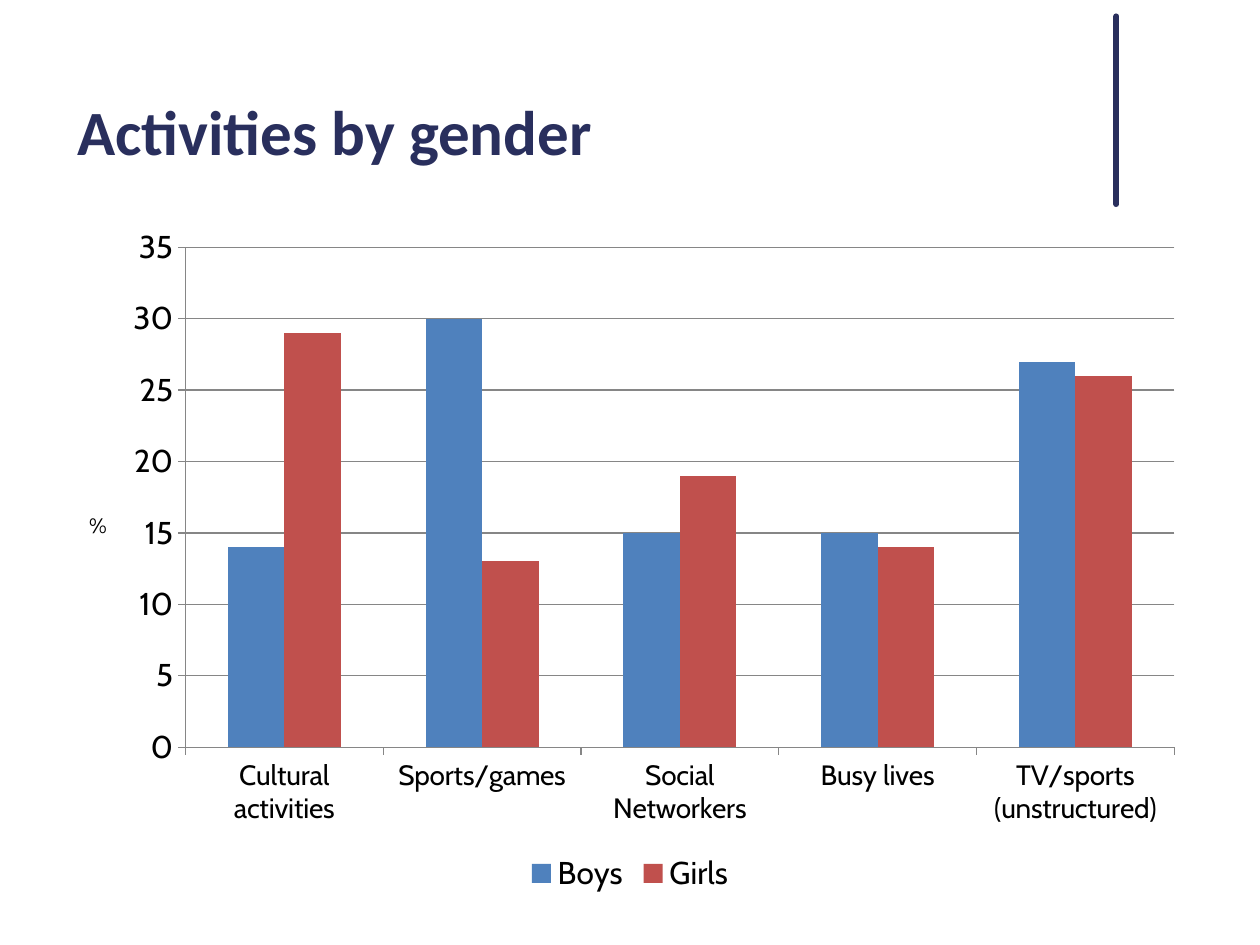
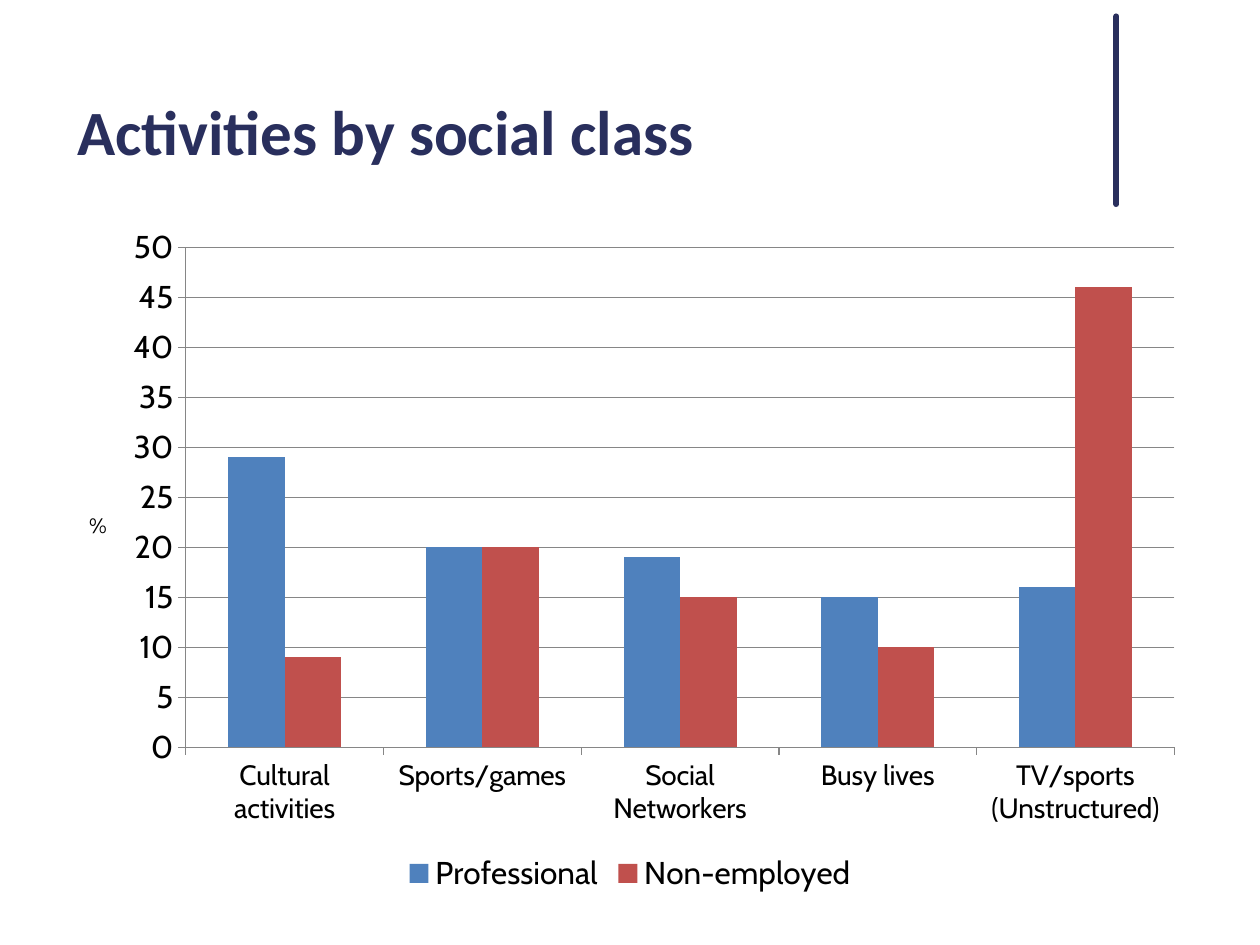
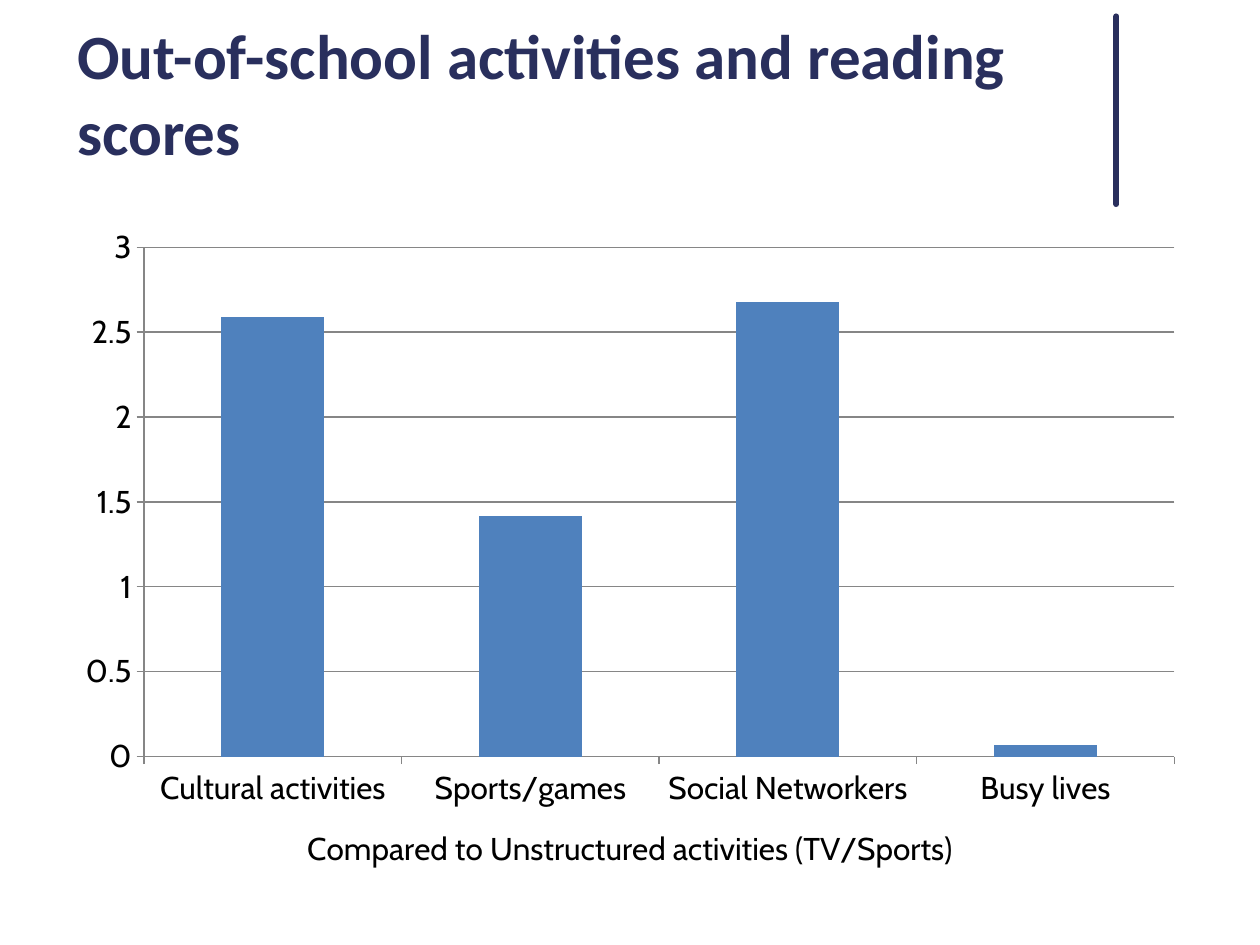
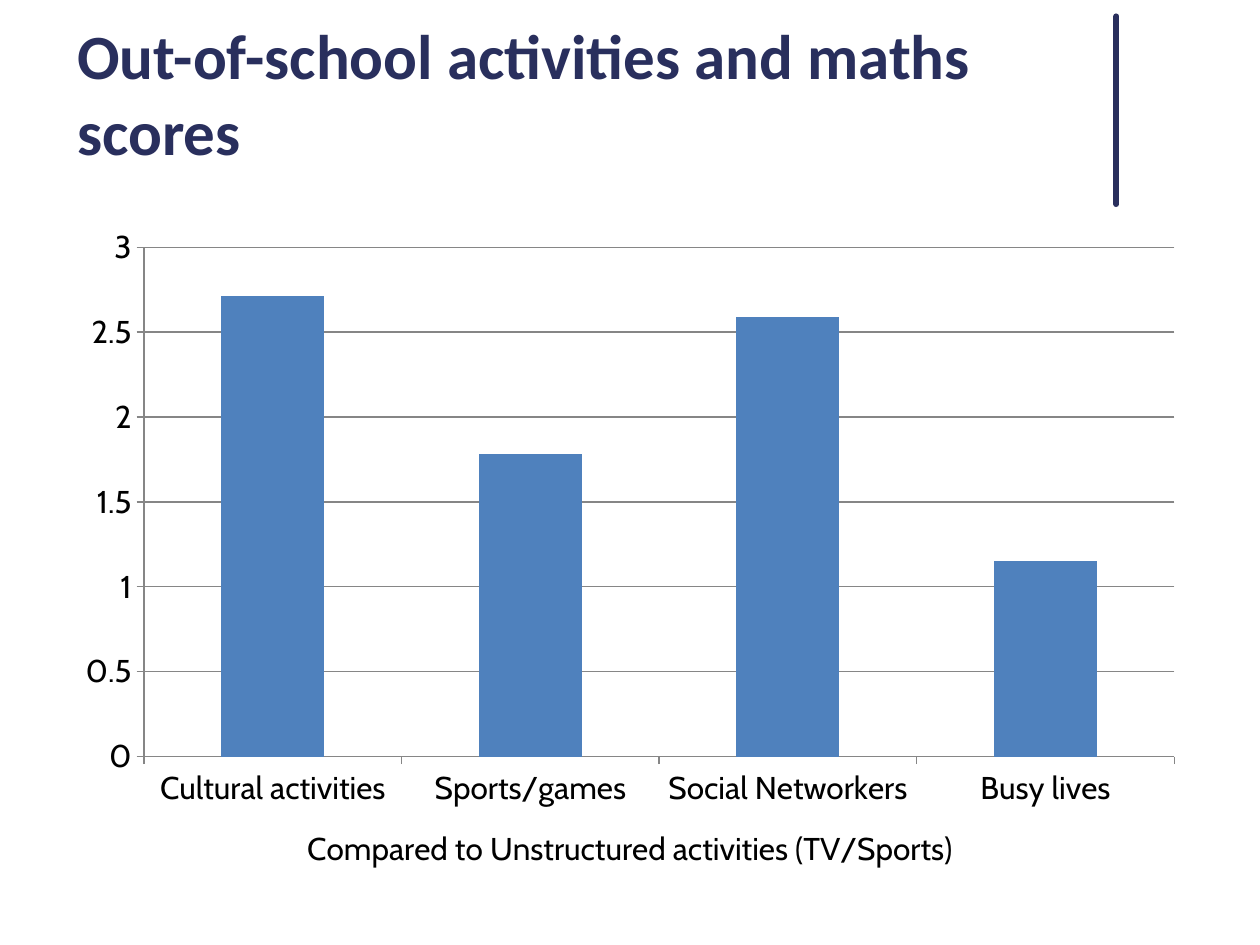
from pptx import Presentation
from pptx.chart.data import CategoryChartData
from pptx.dml.color import RGBColor
from pptx.enum.chart import XL_CHART_TYPE, XL_LEGEND_POSITION, XL_TICK_MARK
from pptx.enum.shapes import MSO_CONNECTOR
from pptx.enum.text import MSO_ANCHOR, MSO_AUTO_SIZE, PP_ALIGN
from pptx.oxml.ns import qn
from pptx.util import Pt
from lxml import etree

COLUMNS = XL_CHART_TYPE.COLUMN_CLUSTERED
LEGEND_BOTTOM = XL_LEGEND_POSITION.BOTTOM
OUTSIDE = XL_TICK_MARK.OUTSIDE
STRAIGHT = MSO_CONNECTOR.STRAIGHT
BOTTOM = MSO_ANCHOR.BOTTOM
NO_AUTOFIT = MSO_AUTO_SIZE.NONE
LEFT = PP_ALIGN.LEFT

NAVY, BLACK, GRAY = "292F5D", "000000", "868686"
SERIES_COLORS = ["4F81BD", "C0504D"]
HEADING_FONT, CHART_FONT = "Calibri", "Cabin"


def color(hex_code):
    return RGBColor.from_string(hex_code)


def style_font(font, size, hex_code, name=None, bold=False):
    font.size = Pt(size)
    font.bold = bold
    font.color.rgb = color(hex_code)
    if name:
        font.name = name


activities = ["Cultural activities", "Sports/games", "Social Networkers", "Busy lives"]
baseline = "Compared to Unstructured activities (TV/Sports)"

topics = [
    {
        "heading": "Activities by gender",
        "categories": activities + ["TV/sports (unstructured)"],
        "groups": {"Boys": [14, 30, 15, 15, 27], "Girls": [29, 13, 19, 14, 26]},
        "scale": (35, 5), "label_size": 16, "value_title": "%",
    },
    {
        "heading": "Activities by social class",
        "categories": activities + ["TV/sports (Unstructured)"],
        "groups": {"Professional": [29, 20, 19, 15, 16], "Non-employed": [9, 20, 15, 10, 46]},
        "scale": (50, 5), "label_size": 16, "value_title": "%",
    },
    {
        "heading": "Out-of-school activities and reading scores",
        "categories": activities,
        "groups": {"Series 1": [2.59, 1.42, 2.68, 0.07]},
        "scale": (3, 0.5), "label_size": 18, "category_title": baseline,
    },
    {
        "heading": "Out-of-school activities and maths scores",
        "categories": activities,
        "groups": {"Series 1": [2.71, 1.78, 2.59, 1.15]},
        "scale": (3, 0.5), "label_size": 18, "category_title": baseline,
    },
]

prs = Presentation()
prs.slide_width, prs.slide_height = Pt(720), Pt(540)
title_only = prs.slide_layouts[5]

for topic in topics:
    slide = prs.slides.add_slide(title_only)

    if topic is topics[0]:
        accent = slide.shapes.add_connector(STRAIGHT, Pt(637.9), Pt(9.3), Pt(637.9), Pt(116.7))
        accent.line.color.rgb = color(NAVY)
        accent.line.width = Pt(3.25)
        accent.line._get_or_add_ln().set("cap", "rnd")
        etree.SubElement(accent.element.spPr, qn("a:effectLst"))
        accent.element.nvCxnSpPr.cNvPr.set("id", "20")
        prs.slide_master.shapes.element.append(accent.element)

    heading = slide.shapes.title
    heading.left, heading.top, heading.width, heading.height = Pt(36.9), Pt(31.4), Pt(594), Pt(68.2)
    heading_text = heading.text_frame
    heading_text.word_wrap = True
    heading_text.auto_size = NO_AUTOFIT
    heading_text.vertical_anchor = BOTTOM
    heading_text.paragraphs[0].alignment = LEFT
    run = heading_text.paragraphs[0].add_run()
    run.text = topic["heading"]
    style_font(run.font, 36, NAVY, HEADING_FONT, True)

    data = CategoryChartData()
    data.categories = topic["categories"]
    for group, values in topic["groups"].items():
        data.add_series(group, values)
    chart = slide.shapes.add_chart(COLUMNS, Pt(36), Pt(122.6), Pt(648), Pt(391), data).chart
    chart.has_title = False
    style_font(chart.font, 18, BLACK, CHART_FONT)

    columns = chart.plots[0]
    columns.gap_width = 150
    columns.overlap = 0
    columns.vary_by_categories = False
    for series, hex_code in zip(columns.series, SERIES_COLORS):
        series.format.fill.solid()
        series.format.fill.fore_color.rgb = color(hex_code)

    chart.has_legend = len(topic["groups"]) > 1
    if chart.has_legend:
        chart.legend.position = LEGEND_BOTTOM
        chart.legend.include_in_layout = False
        style_font(chart.legend.font, 18, BLACK, CHART_FONT)

    category_axis, value_axis = chart.category_axis, chart.value_axis
    value_axis.minimum_scale = 0
    value_axis.maximum_scale, value_axis.major_unit = topic["scale"]
    value_axis.has_major_gridlines = True
    grid_line = value_axis.major_gridlines.format.line
    grid_line.color.rgb = color(GRAY)
    grid_line.width = Pt(0.75)

    for axis, label_size, title_key, title_size in (
        (category_axis, topic["label_size"], "category_title", 18),
        (value_axis, 18, "value_title", 12),
    ):
        axis.major_tick_mark = OUTSIDE
        axis.format.line.color.rgb = color(GRAY)
        axis.format.line.width = Pt(0.75)
        style_font(axis.tick_labels.font, label_size, BLACK, CHART_FONT)
        axis.has_title = title_key in topic
        if axis.has_title:
            axis_text = axis.axis_title.text_frame
            run = axis_text.paragraphs[0].add_run()
            run.text = topic[title_key]
            style_font(run.font, title_size, BLACK)
            axis_text._txBody.bodyPr.set("rot", "0")

prs.save("out.pptx")
